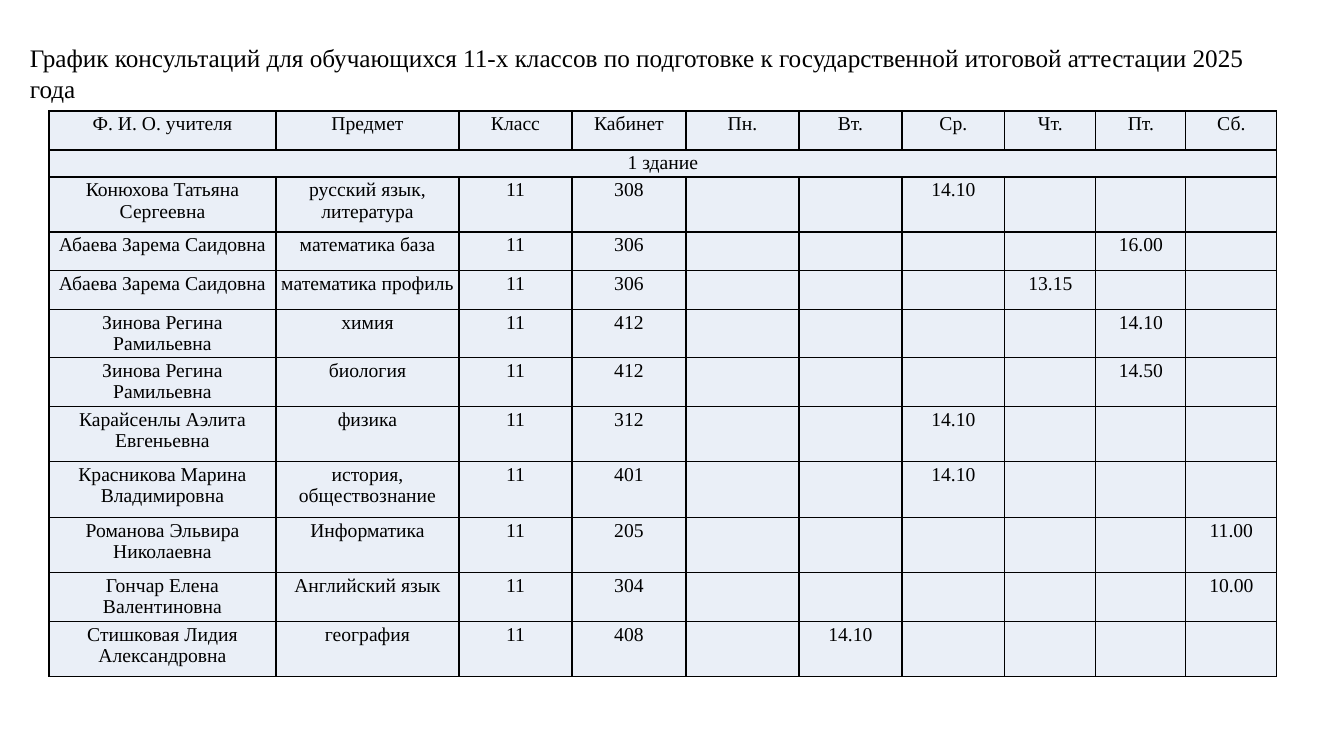
from lxml.etree import SubElement
from pptx import Presentation
from pptx.dml.color import RGBColor
from pptx.enum.text import MSO_ANCHOR, PP_ALIGN
from pptx.oxml.ns import qn
from pptx.util import Emu, Pt

PAGE_WIDTH, PAGE_HEIGHT = 1344, 756
EMU_PER_PX = 12192000 / PAGE_WIDTH
FONT = "Times New Roman"
BLACK, PALE_BLUE = "000000", "EAEFF7"

TITLE = ("График консультаций для обучающихся 11-х классов по подготовке "
         "к государственной итоговой аттестации 2025 года")
BUILDING = "1 здание"
DAYS = ["Пн.", "Вт.", "Ср.", "Чт.", "Пт.", "Сб."]
HEADINGS = ["Ф. И. О. учителя", "Предмет", "Класс", "Кабинет"] + DAYS
GRADE = "11"
CONSULTATIONS = [
    ("Конюхова Татьяна Сергеевна", "русский язык, литература", "308", "Ср.", "14.10"),
    ("Абаева Зарема Саидовна", "математика база", "306", "Пт.", "16.00"),
    ("Абаева Зарема Саидовна", "математика профиль", "306", "Чт.", "13.15"),
    ("Зинова Регина Рамильевна", "химия", "412", "Пт.", "14.10"),
    ("Зинова Регина Рамильевна", "биология", "412", "Пт.", "14.50"),
    ("Карайсенлы Аэлита Евгеньевна", "физика", "312", "Ср.", "14.10"),
    ("Красникова Марина Владимировна", "история, обществознание", "401", "Ср.", "14.10"),
    ("Романова Эльвира Николаевна", "Информатика", "205", "Сб.", "11.00"),
    ("Гончар Елена Валентиновна", "Английский язык", "304", "Сб.", "10.00"),
    ("Стишковая Лидия Александровна", "география", "408", "Вт.", "14.10"),
]
COLUMN_WIDTHS = [227, 183, 113, 114, 113, 103, 103, 91, 90, 91]
ROW_HEIGHTS = [39, 27, 55, 39, 39, 48, 49, 55, 56, 55, 49, 55]


def px(length):
    return Emu(round(length * EMU_PER_PX))


def color(value):
    return RGBColor.from_string(value)


def add_span(para, text, size):
    span = para.add_run()
    span.text = text
    span.font.name = FONT
    span.font.size = Pt(size)
    span.font.bold = False
    span.font.color.rgb = color(BLACK)


def add_borders(cell):
    properties = cell._tc.get_or_add_tcPr()
    for position, side in enumerate(("a:lnL", "a:lnR", "a:lnT", "a:lnB")):
        line = SubElement(properties, qn(side), w=str(Pt(1)))
        fill = SubElement(line, qn("a:solidFill"))
        SubElement(fill, qn("a:srgbClr"), val=BLACK)
        properties.insert(position, line)


def style_cell(cell):
    cell.margin_left = cell.margin_right = px(5)
    cell.margin_top = cell.margin_bottom = px(2)
    cell.fill.solid()
    cell.fill.fore_color.rgb = color(PALE_BLUE)
    add_borders(cell)


def fill_cell(cell, text):
    if text:
        para = cell.text_frame.paragraphs[0]
        para.alignment = PP_ALIGN.CENTER
        add_span(para, text, 14)


def schedule_rows():
    rows = [HEADINGS, [BUILDING]]
    for teacher, subject, room, day, time in CONSULTATIONS:
        times = [time if day == name else "" for name in DAYS]
        rows.append([teacher, subject, GRADE, room] + times)
    return rows


def add_title(page, left, top, width, height):
    box = page.shapes.add_textbox(px(left), px(top), px(width), px(height))
    frame = box.text_frame
    frame.word_wrap = False
    frame.vertical_anchor = MSO_ANCHOR.MIDDLE
    add_span(frame.paragraphs[0], TITLE, 18)


def add_schedule(page, left, top, width, height):
    rows = schedule_rows()
    table = page.shapes.add_table(len(rows), len(HEADINGS), px(left), px(top),
                                  px(width), px(height)).table
    table.first_row = False
    table.horz_banding = False
    for column, column_width in zip(table.columns, COLUMN_WIDTHS):
        column.width = px(column_width)
    for row, row_height in zip(table.rows, ROW_HEIGHTS):
        row.height = px(row_height)
        for cell in row.cells:
            style_cell(cell)
    table.cell(1, 0).merge(table.cell(1, len(HEADINGS) - 1))
    for row, texts in zip(table.rows, rows):
        for cell, text in zip(row.cells, texts):
            fill_cell(cell, text)


def main():
    deck = Presentation()
    deck.slide_width, deck.slide_height = px(PAGE_WIDTH), px(PAGE_HEIGHT)
    page = deck.slides.add_slide(deck.slide_layouts[6])
    add_schedule(page, 49, 111, sum(COLUMN_WIDTHS), sum(ROW_HEIGHTS))
    add_title(page, 20, 48, 1285, 50)
    deck.save("out.pptx")


if __name__ == "__main__":
    main()
